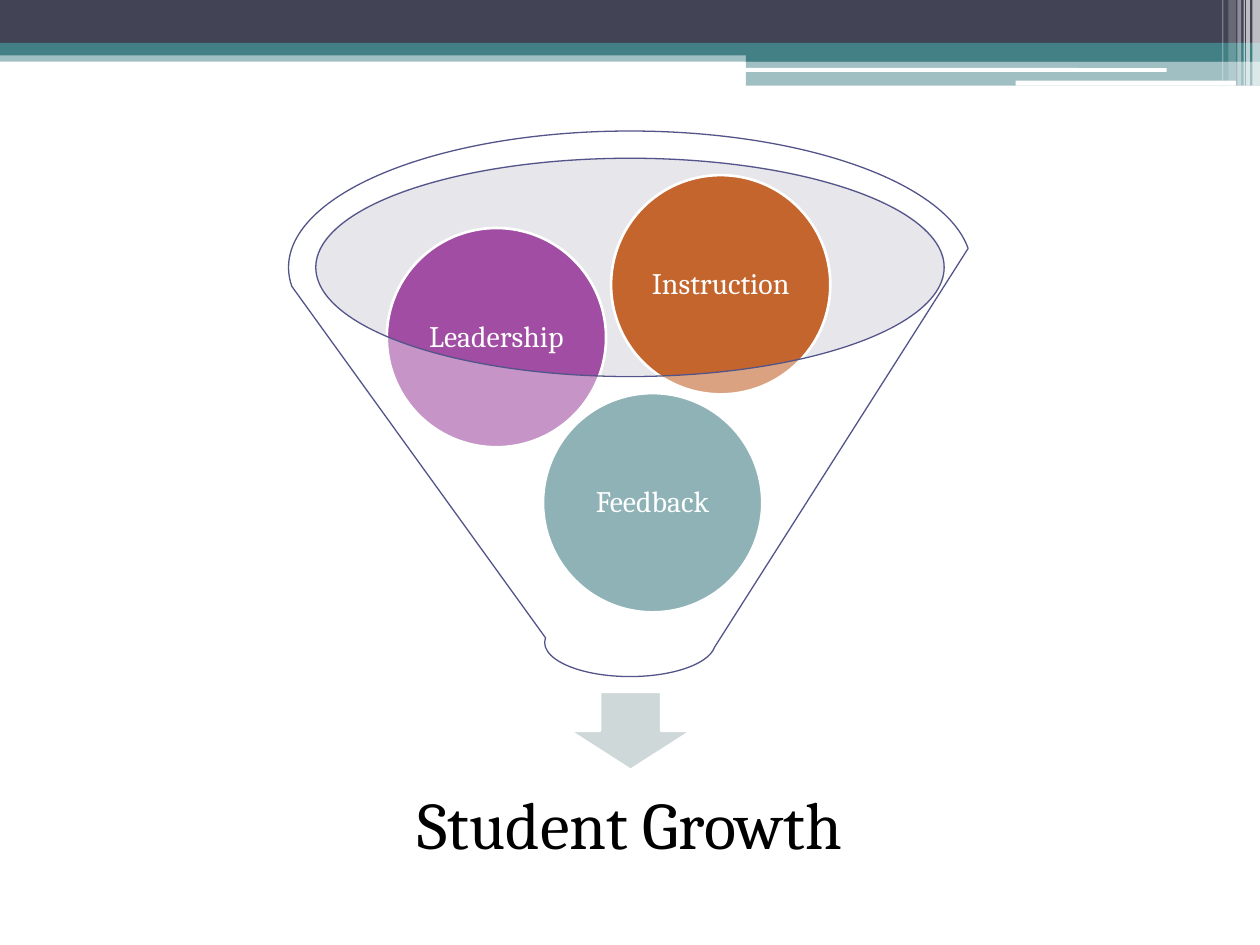
from lxml.etree import SubElement
from pptx import Presentation
from pptx.dml.color import RGBColor
from pptx.enum.shapes import MSO_SHAPE as Shape
from pptx.enum.text import MSO_ANCHOR as Anchor, PP_ALIGN as Align
from pptx.oxml.ns import qn
from pptx.util import Inches, Pt

FONT = "Cambria"
NAVY, TEAL, WHITE, BLACK = "424456", "438086", "FFFFFF", "000000"


def paint(color_format, color):
    color_format.rgb = RGBColor.from_string(color)


def add_figure(page, kind, box, fill, opacity=100, line=None, width=0.75):
    figure = page.shapes.add_shape(kind, *map(Inches, box))
    figure.shadow.inherit = False
    figure.fill.solid()
    paint(figure.fill.fore_color, fill)
    if opacity < 100:
        color = figure.fill._xPr.find(qn("a:solidFill"))[0]
        SubElement(color, qn("a:alpha"), val=str(opacity * 1000))
    if line:
        paint(figure.line.color, line)
        figure.line.width = Pt(width)
    else:
        figure.line.fill.background()
    return figure


def write(figure, text, size, color, inset):
    frame = figure.text_frame
    margins = {f"margin_{side}": Inches(inset) for side in ("left", "top", "right", "bottom")}
    settings = {"word_wrap": True, "vertical_anchor": Anchor.MIDDLE, **margins}
    for name, value in settings.items():
        setattr(frame, name, value)
    para = frame.paragraphs[0]
    para.alignment = Align.CENTER
    para.line_spacing = 0.9
    span = para.add_run()
    span.text = text
    for name, value in {"name": FONT, "size": Pt(size)}.items():
        setattr(span.font, name, value)
    paint(span.font.color, color)


def add_banner(page, box):
    left, top, width, height = box
    right = left + width
    step = left + 5.92
    bands = [
        (left, 0.4, width, 0.09, TEAL, 50),
        (left, 0, width, 0.34, NAVY, 100),
        (left, 0.34, width, 0.1, TEAL, 100),
        (step, 0.39, right - step, 0.1, TEAL, 100),
        (step, 0.48, right - step, 0.2, TEAL, 50),
    ]
    for x, y, w, h, color, opacity in bands:
        add_figure(page, Shape.RECTANGLE, (x, top + y, w, h), color, opacity)
    for x, y, w, h in [(5.91, 0.54, 3.35, 0.03), (8.06, 0.64, 1.75, 0.04)]:
        add_figure(page, Shape.ROUNDED_RECTANGLE, (left + x, top + y, w, h), WHITE)
    stripes = [
        (0.06, 0.06, height, 65),
        (0.11, 0.03, height, 65),
        (0.13, 0.01, height, 60),
        (0.18, 0.03, height, 40),
        (0.25, 0.06, 0.64, 20),
        (0.3, 0.01, 0.64, 30),
    ]
    for offset, w, h, opacity in stripes:
        add_figure(page, Shape.RECTANGLE, (right - offset, top, w, h), WHITE, opacity)


def add_funnel(page, box):
    left, top, width, height = box
    center = left + width / 2
    add_figure(page, Shape.OVAL, (center - 2.5, top + 0.21, 5, 1.73), "C3C3CF", 40)
    add_figure(page, Shape.DOWN_ARROW, (center - 0.48, top + 4.45, 0.97, 0.62),
               "CFD8D9", line=WHITE, width=1.5)
    result = page.shapes.add_textbox(*map(Inches, (center - 2.32, top + 4.95, 4.64, 1.16)))
    write(result, "Student Growth", 38, BLACK, 0.3)
    balls = [
        ("Feedback", 2.02, 2.08, TEAL),
        ("Leadership", 0.78, 0.77, "A04DA3"),
        ("Instruction", 2.56, 0.35, "C4652D"),
    ]
    for label, x, y, color in balls:
        ball = add_figure(page, Shape.OVAL, (left + x, top + y, 1.74, 1.74),
                          color, line=WHITE, width=1.5)
        write(ball, label, 17, WHITE, 0.02)
    add_figure(page, Shape.FUNNEL, box, WHITE, 40, line="53548A")


def main():
    deck = Presentation()
    deck.slide_width, deck.slide_height = Inches(10), Inches(7.5)
    page = deck.slides.add_slide(deck.slide_layouts[6])
    add_banner(page, (0, 0, 10, 0.68))
    add_funnel(page, (2.29, 1.04, 5.42, 4.33))
    deck.save("out.pptx")


if __name__ == "__main__":
    main()
